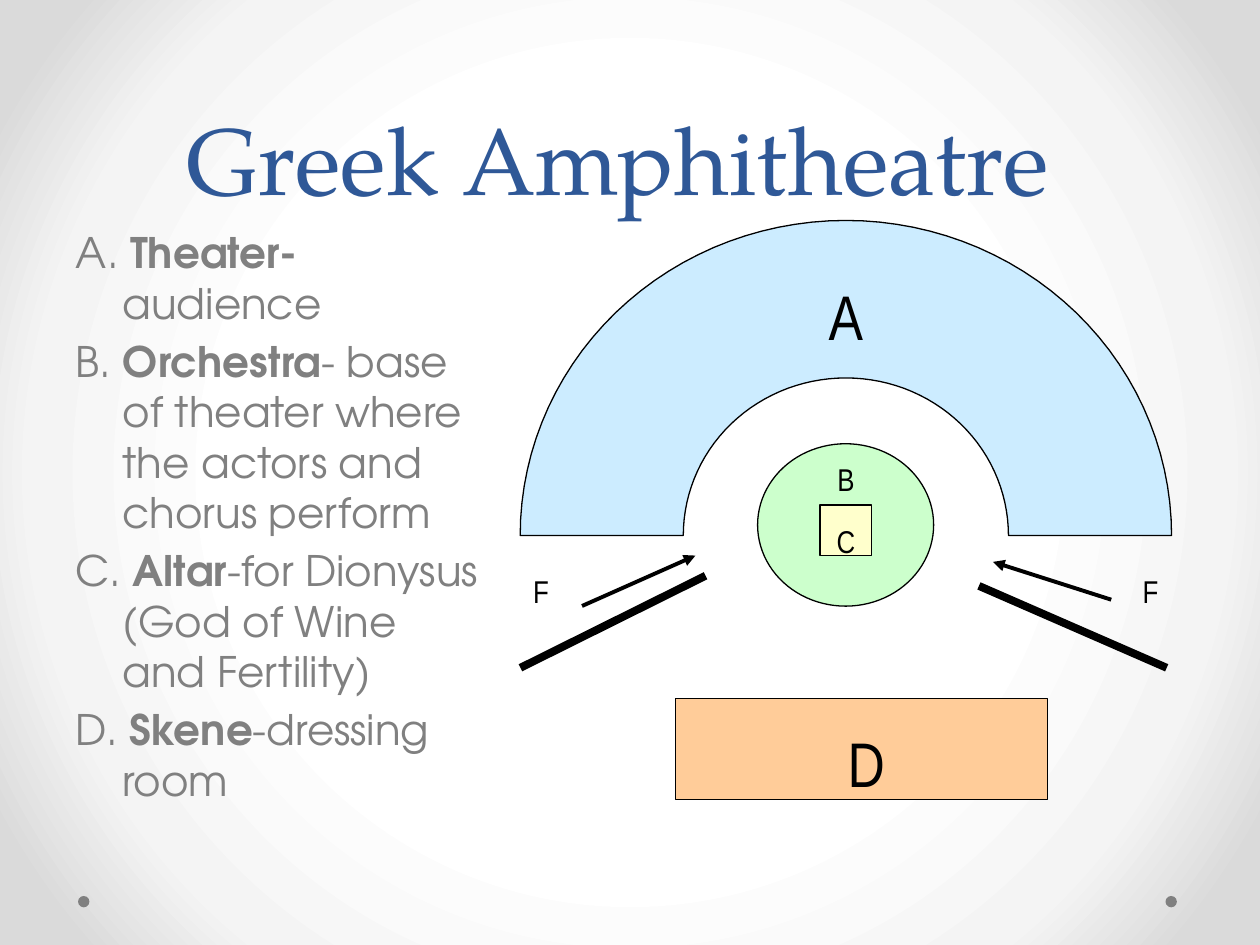
import math
from lxml import etree
from pptx import Presentation, oxml
from pptx import util as u
from pptx.dml.color import RGBColor
from pptx.enum import shapes as sh, text as tx
from pptx.oxml.ns import qn

# Content; all lengths are points
TITLE = "Greek Amphitheatre"
PARTS = [
    ("A. ", "Theater-", "audience"),
    ("B. ", "Orchestra", "- base of theater where the actors and chorus perform"),
    ("C. ", "Altar", "-for Dionysus (God of Wine and Fertility)"),
    ("D. ", "Skene", "-dressing room"),
]
SEATING = {"center": (483.4, 306), "outer": (186.1, 180), "inner": (92.9, 90)}
STAGE = [  # preset, box, fill
    ("RECTANGLE", (386, 399, 212.5, 58), "skene"),
    ("OVAL", (432.9, 253.6, 100.6, 92.8), "orchestra"),
    ("RECTANGLE", (468.6, 288.5, 29.4, 29), "altar"),
]
WALLS = [((297.4, 381.6), (403.2, 329)), ((666.7, 381.6), (559.4, 334.8))]
ENTRANCES = [((332.6, 346.3), (397.4, 317.5)), ((635, 342.7), (567.4, 321.1))]
LABELS = [  # letter, centre x, top, size role
    ("A", 483.4, 154.8, "area"), ("B", 483.4, 259.2, "spot"),
    ("C", 483.4, 294.5, "spot"), ("D", 495, 410.4, "area"),
    ("F", 309.2, 323.3, "spot"), ("F", 657.4, 323.3, "spot"),
]
DOTS = [(44.6, 512), (666, 512)]

THEME = {
    "title": "2F5897", "body": "808080", "ink": "000000",
    "seating": "CCECFF", "skene": "FFCC99", "orchestra": "CCFFCC", "altar": "FFFFCC",
    "backdrop": [(0, "FFFFFF"), (50, "FFFFFF"), (76, "F4F4F4"),
                 (92, "DADADA"), (100, "DADADA")],
    "title_font": "TeX Gyre Pagella", "body_font": "TeX Gyre Adventor",
    "label_font": "Arial Narrow",
    "size": {"title": 54, "body": 24, "area": 36, "spot": 18},
}


def color(role):
    return RGBColor.from_string(THEME[role])


def set_font(font, face, size, role):
    font.name, font.size = face, u.Pt(THEME["size"][size])
    font.color.rgb = color(role)


def paint(shape, fill, outlined=True):
    shape.shadow.inherit = False
    shape.fill.solid()
    shape.fill.fore_color.rgb = color(fill)
    if outlined:
        shape.line.color.rgb = color("ink")
        shape.line.width = u.Pt(0.75)
    else:
        shape.line.fill.background()


def add_preset(slide, preset, box, fill, outlined=True):
    kind = getattr(sh.MSO_SHAPE, preset)
    paint(slide.shapes.add_shape(kind, *map(u.Pt, box)), fill, outlined)


def add_text(slide, box, wrap=True):
    frame = slide.shapes.add_textbox(*map(u.Pt, box)).text_frame
    frame.word_wrap = wrap
    return frame


def add_line(slide, start, end, width, arrow=False):
    line = slide.shapes.add_connector(
        sh.MSO_CONNECTOR.STRAIGHT, *map(u.Pt, start + end))
    line.line.color.rgb = color("ink")
    line.line.width = u.Pt(width)
    if arrow:
        etree.SubElement(line.line._get_or_add_ln(), qn("a:tailEnd"), type="triangle")
    etree.SubElement(line._element.spPr, qn("a:effectLst"))


def half_ellipse(center, radii, steps=60):
    angles = [math.pi * (1 + i / steps) for i in range(steps + 1)]
    return [(u.Pt(center[0] + radii[0] * math.cos(a)),
             u.Pt(center[1] + radii[1] * math.sin(a))) for a in angles]


def add_backdrop(slide):
    slide.background.fill.solid()
    stops = "".join(f'<a:gs pos="{pos * 1000}"><a:srgbClr val="{rgb}"/></a:gs>'
                    for pos, rgb in THEME["backdrop"])
    gradient = oxml.parse_xml(
        '<a:gradFill xmlns:a="http://schemas.openxmlformats.org/drawingml/2006/main"'
        f' rotWithShape="1"><a:gsLst>{stops}</a:gsLst><a:path path="circle">'
        '<a:fillToRect l="50000" t="50000" r="50000" b="50000"/></a:path></a:gradFill>')
    properties = slide._element.xpath(".//p:bgPr")[0]
    properties.replace(properties[0], gradient)


def add_heading(slide):
    frame = add_text(slide, (36, 0, 634, 126))
    frame.vertical_anchor = tx.MSO_ANCHOR.BOTTOM
    heading = frame.paragraphs[0]
    heading.text = TITLE
    heading.alignment = tx.PP_ALIGN.CENTER
    heading.line_spacing = u.Pt(58)
    set_font(heading.font, THEME["title_font"], "title", "title")


def add_key(slide):
    frame = add_text(slide, (36, 126, 246, 356.4))
    for i, (letter, term, meaning) in enumerate(PARTS):
        entry = frame.add_paragraph() if i else frame.paragraphs[0]
        entry.space_before = u.Pt(4.5)
        hanging = entry._p.get_or_add_pPr()
        hanging.set("marL", str(u.Pt(27)))
        hanging.set("indent", str(-u.Pt(27)))
        set_font(entry.font, THEME["body_font"], "body", "body")
        for words in (letter, term, meaning):
            run = entry.add_run()
            run.text = words
            run.font.bold = words == term


def add_diagram(slide):
    # Seating
    outer = half_ellipse(SEATING["center"], SEATING["outer"])
    inner = half_ellipse(SEATING["center"], SEATING["inner"])
    builder = slide.shapes.build_freeform(*outer[0])
    builder.add_line_segments(outer[1:] + inner[::-1], close=True)
    paint(builder.convert_to_shape(), "seating")
    # Stage areas, walls and entrances
    for preset, box, fill in STAGE:
        add_preset(slide, preset, box, fill)
    for start, end in WALLS:
        add_line(slide, start, end, 4.5)
    for start, end in ENTRANCES:
        add_line(slide, start, end, 2.25, arrow=True)
    # Letters
    for letter, middle, top, size in LABELS:
        frame = add_text(slide, (middle - 20, top, 40, 34), wrap=False)
        label = frame.paragraphs[0]
        label.text = letter
        label.alignment = tx.PP_ALIGN.CENTER
        set_font(label.font, THEME["label_font"], size, "ink")


def main():
    deck = Presentation()
    deck.slide_width, deck.slide_height = u.Pt(720), u.Pt(540)
    slide = deck.slides.add_slide(deck.slide_layouts[6])
    add_backdrop(slide)
    for corner in DOTS:
        add_preset(slide, "OVAL", corner + (6.5, 6.5), "body", outlined=False)
    add_heading(slide)
    add_key(slide)
    add_diagram(slide)
    deck.save("out.pptx")


if __name__ == "__main__":
    main()
